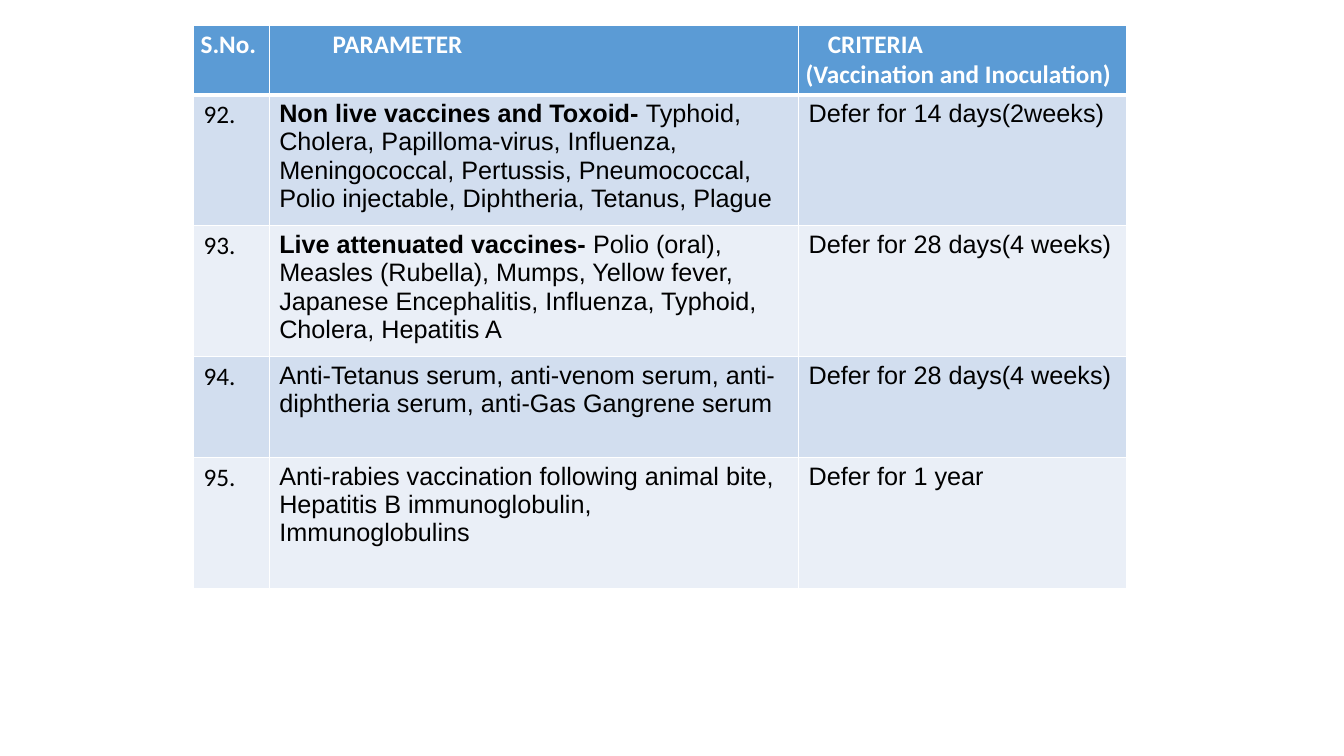
from dataclasses import dataclass

from lxml import etree
from pptx import Presentation
from pptx import util as u
from pptx.dml import color
from pptx.oxml import ns


@dataclass(frozen=True)
class Theme:
    """Colours, fonts and type size of the slide."""
    header_fill: str = "5B9BD5"
    band_fills: tuple[str, str] = ("D2DEEF", "EAEFF7")
    white: str = "FFFFFF"
    black: str = "000000"
    label_font: str = "Calibri"
    body_font: str = "Arial"
    size: int = 18


@dataclass(frozen=True)
class Heading:
    """Column heading with its width and first-line indent in inches."""
    lines: tuple[str, ...]
    width: float
    indent: float = 0


@dataclass(frozen=True)
class Deferral:
    """One numbered vaccination rule and its row height in inches."""
    number: str
    lead: str
    detail: str
    criteria: str
    height: float


THEME = Theme()
HEADER_HEIGHT = 0.67
HEADINGS = [
    Heading(("S.No.",), 0.75),
    Heading(("PARAMETER",), 5.25, 0.56),
    Heading(("CRITERIA", "(Vaccination and Inoculation)"), 3.25, 0.22),
]
DEFERRALS = [
    Deferral("92.", "Non live vaccines and Toxoid- ",
             "Typhoid, Cholera, Papilloma-virus, Influenza, Meningococcal, Pertussis, "
             "Pneumococcal, Polio injectable, Diphtheria, Tetanus, Plague",
             "Defer for 14 days(2weeks)", 1.3),
    Deferral("93.", "Live attenuated vaccines- ",
             "Polio (oral), Measles (Rubella), Mumps, Yellow fever, Japanese Encephalitis, "
             "Influenza, Typhoid, Cholera, Hepatitis A",
             "Defer for 28 days(4 weeks)", 1.3),
    Deferral("94.", "",
             "Anti-Tetanus serum, anti-venom serum, anti-diphtheria serum, "
             "anti-Gas Gangrene serum",
             "Defer for 28 days(4 weeks)", 1.0),
    Deferral("95.", "",
             "Anti-rabies vaccination following animal bite, Hepatitis B immunoglobulin, "
             "Immunoglobulins",
             "Defer for 1 year", 1.3),
]


def add_run(paragraph, content: str, font: str, colour: str, bold: bool = False) -> None:
    """Append a styled run to a paragraph."""
    run = paragraph.add_run()
    run.text = content
    run.font.name = font
    run.font.size = u.Pt(THEME.size)
    run.font.bold = bold
    run.font.color.rgb = color.RGBColor.from_string(colour)


def style_cell(cell, fill: str, bottom_width: float = 1) -> None:
    """Give a cell white borders and a solid fill."""
    properties = cell._tc.get_or_add_tcPr()
    for side, width in (("L", 1), ("R", 1), ("T", 1), ("B", bottom_width)):
        line = etree.SubElement(properties, ns.qn(f"a:ln{side}"), w=str(u.Pt(width)))
        solid = etree.SubElement(line, ns.qn("a:solidFill"))
        etree.SubElement(solid, ns.qn("a:srgbClr"), val=THEME.white)
    cell.fill.solid()
    cell.fill.fore_color.rgb = color.RGBColor.from_string(fill)


def fill_heading(cell, heading: Heading) -> None:
    """Write a column heading, indenting its first line."""
    style_cell(cell, THEME.header_fill, 3)
    cell.margin_left = cell.margin_right = u.Inches(0.07)
    cell.margin_top = cell.margin_bottom = u.Inches(0.04)
    for index, line in enumerate(heading.lines):
        frame = cell.text_frame
        paragraph = frame.add_paragraph() if index else frame.paragraphs[0]
        if heading.indent and not index:
            paragraph._p.get_or_add_pPr().set("marL", str(u.Inches(heading.indent)))
        add_run(paragraph, line, THEME.label_font, THEME.white, True)


def fill_deferral(cells, deferral: Deferral, fill: str) -> None:
    """Write one rule across the three cells of its row."""
    for cell in cells:
        style_cell(cell, fill)
    number, parameter, criteria = (cell.text_frame.paragraphs[0] for cell in cells)
    add_run(number, deferral.number, THEME.label_font, THEME.black)
    if deferral.lead:
        add_run(parameter, deferral.lead, THEME.body_font, THEME.black, True)
    add_run(parameter, deferral.detail, THEME.body_font, THEME.black)
    add_run(criteria, deferral.criteria, THEME.body_font, THEME.black)


def add_deferral_table(slide) -> None:
    """Draw the table of deferral rules."""
    heights = [HEADER_HEIGHT, *(deferral.height for deferral in DEFERRALS)]
    width = sum(heading.width for heading in HEADINGS)
    table = slide.shapes.add_table(
        len(heights), len(HEADINGS), u.Inches(1.92), u.Inches(0.25),
        u.Inches(width), u.Inches(sum(heights))).table
    for row, height in zip(table.rows, heights):
        row.height = u.Inches(height)
    for index, heading in enumerate(HEADINGS):
        table.columns[index].width = u.Inches(heading.width)
        fill_heading(table.cell(0, index), heading)
    for index, deferral in enumerate(DEFERRALS):
        cells = list(table.rows[index + 1].cells)
        fill_deferral(cells, deferral, THEME.band_fills[index % 2])


def main() -> None:
    """Build and save the presentation."""
    presentation = Presentation()
    presentation.slide_width = u.Inches(13.33)
    presentation.slide_height = u.Inches(7.5)
    slide = presentation.slides.add_slide(presentation.slide_layouts[6])
    add_deferral_table(slide)
    presentation.save("out.pptx")


if __name__ == "__main__":
    main()
